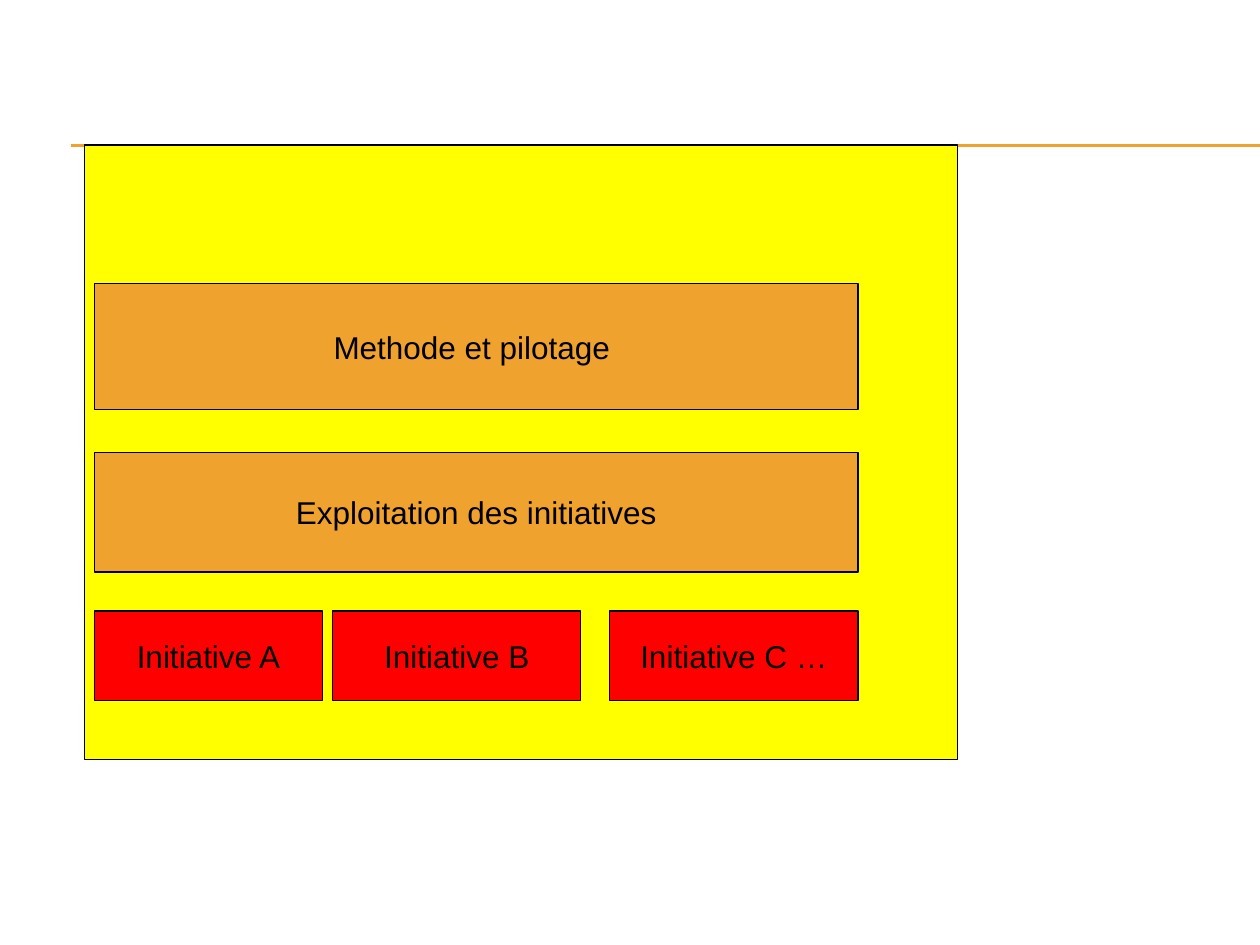
from lxml import etree
from pptx import Presentation
from pptx.dml.color import RGBColor
from pptx.enum.shapes import MSO_CONNECTOR, MSO_SHAPE
from pptx.enum.text import MSO_ANCHOR, PP_ALIGN
from pptx.oxml.ns import qn
from pptx.util import Inches, Pt

RECT = MSO_SHAPE.RECTANGLE
LINE = MSO_CONNECTOR.STRAIGHT
MIDDLE = MSO_ANCHOR.MIDDLE
CENTER = PP_ALIGN.CENTER

BLACK = RGBColor(0x00, 0x00, 0x00)
YELLOW = RGBColor(0xFF, 0xFF, 0x00)
ORANGE = RGBColor(0xF0, 0xA2, 0x2E)
RED = RGBColor(0xFF, 0x00, 0x00)

WIDTH, HEIGHT = 10, 7.5
LEFT, SPAN = 0.75, 6.06  # column shared by the bands and the initiatives
TOP = 1.15

prs = Presentation()
prs.slide_width, prs.slide_height = Inches(WIDTH), Inches(HEIGHT)
slide = prs.slides.add_slide(prs.slide_layouts[6])
shapes = slide.shapes


def add_box(text, x, y, w, h, fill, size=18, font="Arial", color=BLACK):
    box = shapes.add_shape(RECT, Inches(x), Inches(y), Inches(w), Inches(h))
    box.shadow.inherit = False
    box.fill.solid()
    box.fill.fore_color.rgb = fill
    box.line.color.rgb = BLACK
    box.line.width = Pt(0.75)
    if text:
        frame = box.text_frame
        frame.word_wrap = False
        frame.vertical_anchor = MIDDLE
        para = frame.paragraphs[0]
        para.alignment = CENTER
        run = para.add_run()
        run.text = text
        run.font.size = Pt(size)
        run.font.name = font
        run.font.color.rgb = color


# Double rule under the title area
for y in (TOP, TOP + 0.01):
    rule = shapes.add_connector(LINE, Inches(0.56), Inches(y), Inches(WIDTH), Inches(y))
    rule.line.color.rgb = ORANGE
    rule.line.width = Pt(0.75)
    etree.SubElement(rule._element.spPr, qn("a:effectLst"))

# Background panel
add_box("", 0.67, TOP, 6.93, 4.88, YELLOW)

# Initiatives
for text, x, w in (
    ("Initiative A", LEFT, 1.81),
    ("Initiative B", 2.64, 1.97),
    ("Initiative C …", 4.84, 1.97),
):
    add_box(text, x, 4.85, w, 0.71, RED)

# Full-width bands
for text, y, h in (
    ("Exploitation des initiatives", 3.59, 0.95),
    ("Methode et pilotage ", 2.25, 1),
):
    add_box(text, LEFT, y, SPAN, h, ORANGE)

prs.save("out.pptx")
